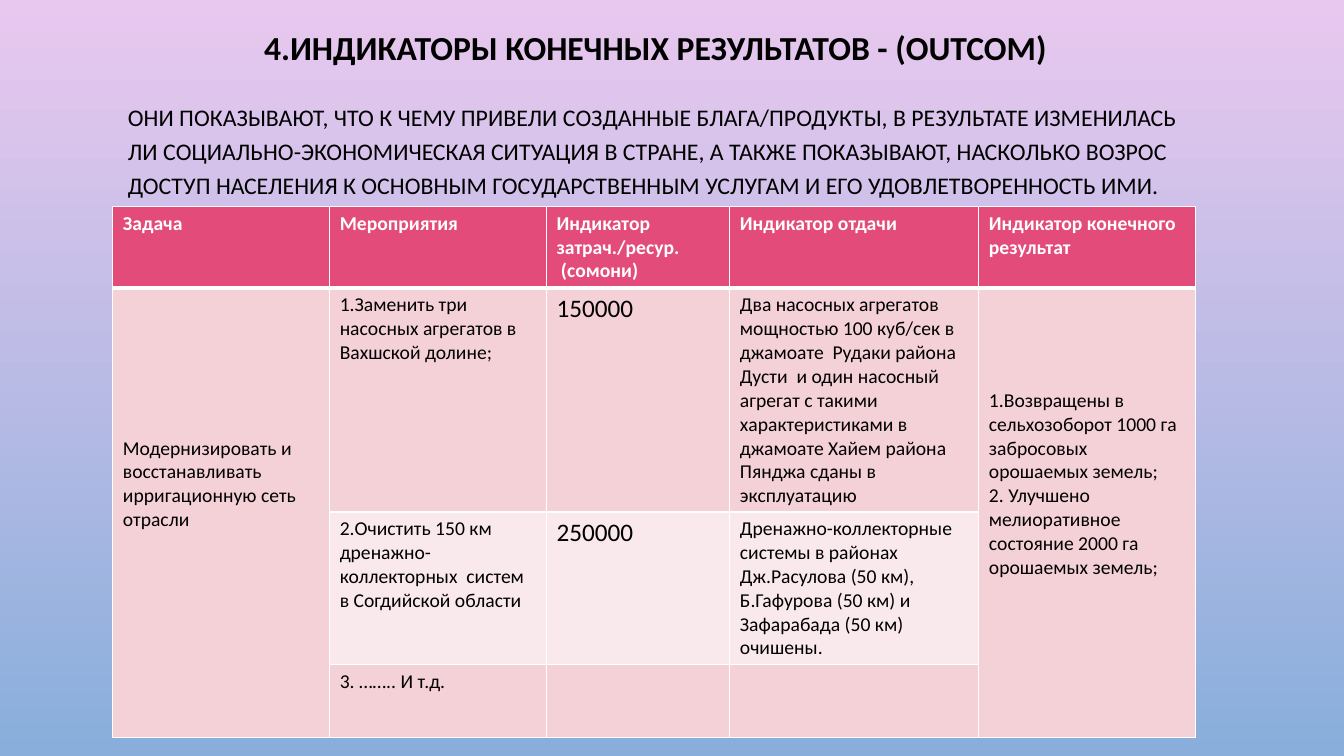
from dataclasses import dataclass

from lxml import etree
from pptx import Presentation
from pptx.dml.color import RGBColor
from pptx.enum.text import MSO_ANCHOR, PP_ALIGN
from pptx.oxml.ns import qn
from pptx.slide import Slide
from pptx.table import Table, _Cell
from pptx.text.text import TextFrame
from pptx.util import Inches, Pt

TOP, BOTTOM = MSO_ANCHOR.TOP, MSO_ANCHOR.BOTTOM
LEFT, CENTER = PP_ALIGN.LEFT, PP_ALIGN.CENTER

LILAC = RGBColor(0xE9, 0xC8, 0xEF)
SKY = RGBColor(0x89, 0xAE, 0xDB)
PINK = RGBColor(0xE3, 0x4B, 0x7A)
ROSE = RGBColor(0xF4, 0xD0, 0xD7)
PALE = RGBColor(0xFA, 0xE9, 0xEC)
WHITE = RGBColor(0xFF, 0xFF, 0xFF)
BLACK = RGBColor(0, 0, 0)

FONT = "Calibri"
WIDE, HIGH = Inches(13.33), Inches(7.5)
COLS = (16.13, 16.13, 13.65, 18.53, 16.13)
ROWS = (10.8, 29.6, 20.2, 9.6)
FILLS = (PINK, ROSE, PALE, ROSE)
THIN, THICK = Pt(1), Pt(3)


@dataclass(frozen=True)
class Label:
    text: str
    left: float
    top: float
    width: float
    height: float
    size: int
    bold: bool
    align: PP_ALIGN
    anchor: MSO_ANCHOR
    lead: float


@dataclass(frozen=True)
class Entry:
    row: int
    col: int
    text: str
    size: int = 14
    span: int = 1
    drop: float = 0.67


LABELS = (
    Label("4.ИНДИКАТОРЫ КОНЕЧНЫХ РЕЗУЛЬТАТОВ - (OUTCOM)",
          13.13, 2.53, 71.27, 7.07, 24, True, CENTER, BOTTOM, 0.9),
    Label("ОНИ ПОКАЗЫВАЮТ, ЧТО К ЧЕМУ ПРИВЕЛИ СОЗДАННЫЕ БЛАГА/ПРОДУКТЫ, "
          "В РЕЗУЛЬТАТЕ ИЗМЕНИЛАСЬ ЛИ СОЦИАЛЬНО-ЭКОНОМИЧЕСКАЯ СИТУАЦИЯ В СТРАНЕ, "
          "А ТАКЖЕ ПОКАЗЫВАЮТ, НАСКОЛЬКО ВОЗРОС ДОСТУП НАСЕЛЕНИЯ К ОСНОВНЫМ "
          "ГОСУДАРСТВЕННЫМ УСЛУГАМ И ЕГО УДОВЛЕТВОРЕННОСТЬ ИМИ.",
          8.78, 12.13, 79.82, 14.93, 17, False, LEFT, TOP, 1.2),
)

ENTRIES = (
    Entry(0, 0, "Задача"),
    Entry(0, 1, "Мероприятия"),
    Entry(0, 2, "Индикатор затрач./ресур.\n (сомони)"),
    Entry(0, 3, "Индикатор отдачи"),
    Entry(0, 4, "Индикатор конечного результат"),
    Entry(1, 0, "Модернизировать и восстанавливать ирригационную сеть отрасли",
          span=3, drop=19.6),
    Entry(1, 1, "1.Заменить три насосных агрегатов в Вахшской долине;"),
    Entry(1, 2, "150000", 18),
    Entry(1, 3, "Два насосных агрегатов мощностью 100 куб/сек в джамоате  Рудаки "
                "района Дусти  и один насосный агрегат с такими характеристиками "
                "в джамоате Хайем района Пянджа сданы в эксплуатацию"),
    Entry(1, 4, "1.Возвращены в сельхозоборот 1000 га забросовых орошаемых земель;\n"
                "2. Улучшено мелиоративное состояние 2000 га орошаемых земель;",
          span=3, drop=13.3),
    Entry(2, 1, "2.Очистить 150 км дренажно- коллекторных  систем в Согдийской области"),
    Entry(2, 2, "250000", 18),
    Entry(2, 3, "Дренажно-коллекторные системы в районах Дж.Расулова (50 км), "
                "Б.Гафурова (50 км) и Зафарабада (50 км) очишены."),
    Entry(3, 1, "3. …….. И т.д."),
)


def across(share: float) -> int:
    return round(WIDE * share / 100)


def down(share: float) -> int:
    return round(HIGH * share / 100)


def style(frame: TextFrame, size: int, bold: bool, color: RGBColor) -> None:
    for para in frame.paragraphs:
        for run in para.runs:
            run.font.name = FONT
            run.font.size = Pt(size)
            run.font.bold = bold
            run.font.color.rgb = color


def paint(slide: Slide) -> None:
    fill = slide.background.fill
    fill.gradient()
    fill.gradient_angle = 270
    for stop, color in zip(fill.gradient_stops, (LILAC, SKY)):
        stop.color.rgb = color


def write(slide: Slide, label: Label) -> None:
    box = slide.shapes.add_textbox(across(label.left), down(label.top),
                                   across(label.width), down(label.height))
    frame = box.text_frame
    frame.word_wrap = True
    frame.vertical_anchor = label.anchor
    frame.text = label.text
    para = frame.paragraphs[0]
    para.alignment = label.align
    para.line_spacing = label.lead
    style(frame, label.size, label.bold, BLACK)


def border(cell: _Cell, row: int) -> None:
    props = cell._tc.get_or_add_tcPr()
    widths = {"lnL": THIN, "lnR": THIN,
              "lnT": THICK if row == 1 else THIN,
              "lnB": THICK if row == 0 else THIN}
    for side, width in widths.items():
        line = etree.SubElement(props, qn(f"a:{side}"), w=str(width))
        solid = etree.SubElement(line, qn("a:solidFill"))
        etree.SubElement(solid, qn("a:srgbClr"), val=str(WHITE))


def enter(table: Table, entry: Entry) -> None:
    cell = table.cell(entry.row, entry.col)
    if entry.span > 1:
        cell.merge(table.cell(entry.row + entry.span - 1, entry.col))
    cell.margin_top = down(entry.drop)
    cell.text_frame.text = entry.text
    head = entry.row == 0
    style(cell.text_frame, entry.size, head, WHITE if head else BLACK)


def tabulate(slide: Slide) -> None:
    table = slide.shapes.add_table(
        len(ROWS), len(COLS), across(8.4), down(27.33),
        across(sum(COLS)), down(sum(ROWS))).table
    for col, share in zip(table.columns, COLS):
        col.width = across(share)
    for index, (share, color) in enumerate(zip(ROWS, FILLS)):
        table.rows[index].height = down(share)
        for cell in table.rows[index].cells:
            border(cell, index)
            cell.fill.solid()
            cell.fill.fore_color.rgb = color
    for entry in ENTRIES:
        enter(table, entry)


def main() -> None:
    deck = Presentation()
    deck.slide_width, deck.slide_height = WIDE, HIGH
    slide = deck.slides.add_slide(deck.slide_layouts[6])
    paint(slide)
    for label in LABELS:
        write(slide, label)
    tabulate(slide)
    deck.save("out.pptx")


if __name__ == "__main__":
    main()
